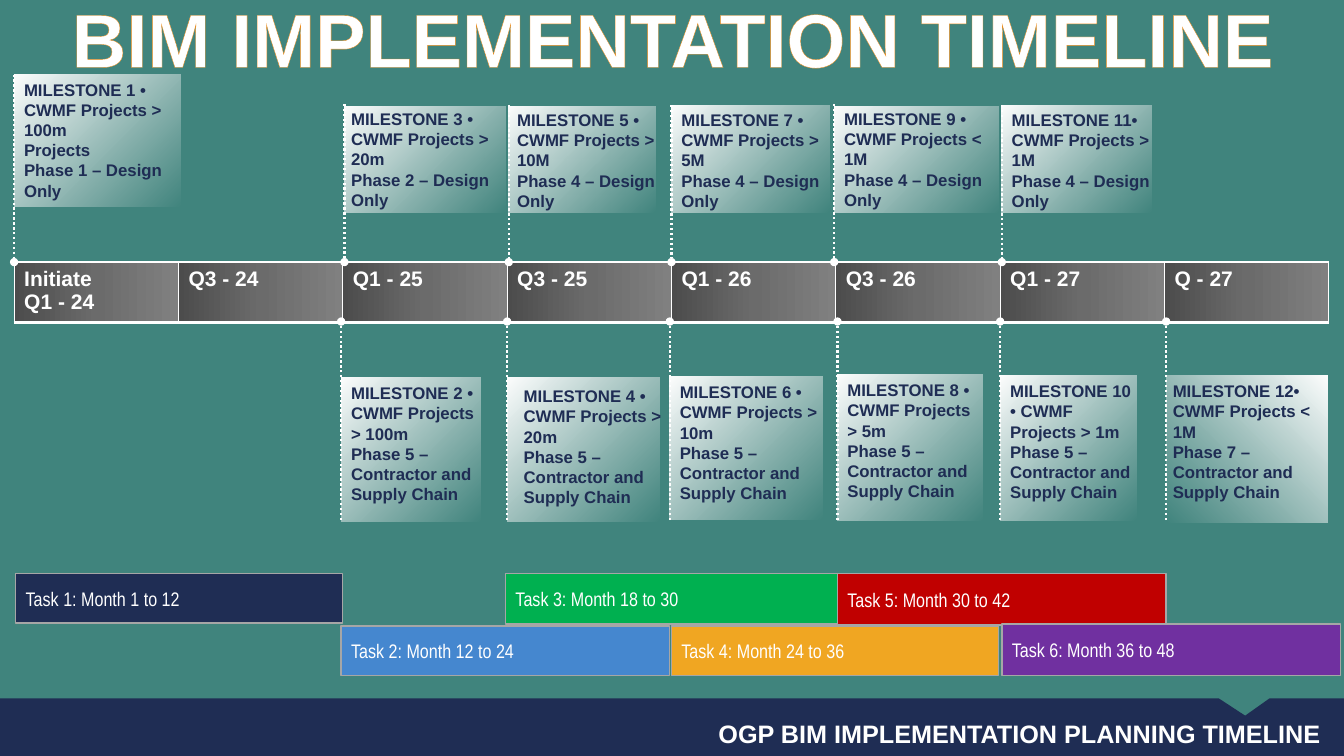
from lxml.etree import SubElement, Element
from pptx import Presentation
from pptx.dml.color import RGBColor as RGB
from pptx.enum.dml import MSO_LINE
from pptx.enum.shapes import MSO_CONNECTOR, MSO_SHAPE as SHAPE
from pptx.enum.text import MSO_ANCHOR as ANCHOR, MSO_AUTO_SIZE as AUTO, PP_ALIGN as ALIGN
from pptx.oxml.ns import qn
from pptx.util import Inches, Pt

TEAL = RGB(0x40, 0x84, 0x7D)
NAVY = RGB(0x1F, 0x2D, 0x54)
WHITE = RGB(0xFF, 0xFF, 0xFF)
PALE = RGB(0xF2, 0xF2, 0xF2)
GREY = RGB(0xA6, 0xA6, 0xA6)
BLACK = RGB(0, 0, 0)
BLUE = RGB(0x45, 0x87, 0xCF)
GREEN = RGB(0, 0xB0, 0x50)
AMBER = RGB(0xF0, 0xA6, 0x22)
ORANGE = RGB(0xEC, 0x8C, 0x1D)
RED = RGB(0xC0, 0, 0)
PURPLE = RGB(0x70, 0x30, 0xA0)
STEEL = [(0, RGB(0x4C, 0x4C, 0x4C), 100), (50, RGB(0x6B, 0x6B, 0x6B), 100),
         (100, RGB(0x80, 0x80, 0x80), 100)]
FADE = [(0, PALE, 0), (100, WHITE, 100)]

QUARTERS = ["Initiate\nQ1 - 24", "Q3 - 24", "Q1 - 25", "Q3 - 25",
            "Q1 - 26", "Q3 - 26", "Q1 - 27", "Q - 27"]
TASKS = [("Task 1: Month 1 to 12", NAVY, 0.01, 11.38, 1.99, 0.98),
         ("Task 2: Month 12 to 24", BLUE, 1.99, 12.42, 2, 0.98),
         ("Task 3: Month 18 to 30", GREEN, 2.99, 11.38, 2.02, 1),
         ("Task 4: Month 24 to 36", AMBER, 4, 12.42, 1.99, 0.98),
         ("Task 5: Month 30 to 42", RED, 5.01, 11.38, 2, 1.02),
         ("Task 6: Month 36 to 48", PURPLE, 6.01, 12.38, 2.06, 1.02)]
DESIGN = "Phase 4 – Design Only"
SUPPLY = "Phase 5 – Contractor and Supply Chain"
UPPER = [
    ("MILESTONE 1 • CWMF Projects > 100m\nProjects\nPhase 1 – Design Only",
     (0, 1.48, 1.01, 2.62), (0, 1.48, 1.11)),
    ("MILESTONE 3 • CWMF Projects > 20m\nPhase 2 – Design Only",
     (2.01, 2.12, 0.98, 2.1), (1.99, 2.06, 0.98)),
    ("MILESTONE 5 • CWMF Projects > 10M\n" + DESIGN,
     (3.01, 2.12, 0.89, 2.1), (3, 2.08, 0.98)),
    ("MILESTONE 7 • CWMF Projects > 5M\n" + DESIGN,
     (4, 2.1, 0.96, 2.12), (4, 2.08, 0.99)),
    ("MILESTONE 9 • CWMF Projects < 1M\n" + DESIGN,
     (4.99, 2.12, 1, 2.1), (4.99, 2.06, 1.05)),
    ("MILESTONE 11• CWMF Projects > 1M\n" + DESIGN,
     (6.01, 2.1, 0.91, 2.12), (6.01, 2.08, 0.97))]
LOWER = [
    ("MILESTONE 2 • CWMF Projects > 100m\n" + SUPPLY,
     (1.99, 7.5, 0.85, 2.84), (1.99, 7.5, 0.9)),
    ("MILESTONE 4 • CWMF Projects > 20m\n" + SUPPLY,
     (3, 7.5, 0.93, 2.84), (3.04, 7.56, 0.99)),
    ("MILESTONE 6 • CWMF Projects > 10m\n" + SUPPLY,
     (3.99, 7.48, 0.93, 2.82), (3.99, 7.48, 0.99)),
    ("MILESTONE 8 • CWMF Projects > 5m\n" + SUPPLY,
     (5.01, 7.44, 0.88, 2.88), (5.01, 7.44, 0.94)),
    ("MILESTONE 10 • CWMF Projects > 1m\n" + SUPPLY,
     (6, 7.46, 0.83, 2.86), (6, 7.46, 0.89)),
    ("MILESTONE 12• CWMF Projects < 1M\nPhase 7 – Contractor and Supply Chain",
     (7.01, 7.46, 0.98, 2.9), (6.99, 7.46, 1.01))]


def node(parent, tag, **attrs):
    return SubElement(parent, qn(tag), {k: str(v) for k, v in attrs.items()})


def tint(parent, color, alpha=100):
    clr = node(parent, "a:srgbClr", val=color)
    if alpha < 100:
        node(clr, "a:alpha", val=alpha * 1000)


def apply(obj, values):
    for name, value in values.items():
        setattr(obj, name, value)


class Timeline:
    """Draws timeline parts on a grid of 1.63 by 0.5 inch cells."""

    LEFT, COL, ROW = 0.14, 1.63, 0.5
    TITLE = dict(size=Pt(54), bold=True, name="Arial")
    FOOTER = dict(size=Pt(18), bold=True, name="Arial")
    QUARTER = dict(size=Pt(15), bold=True, name="Arial")
    NOTE = dict(size=Pt(12), bold=True, name="Arial")
    TASK = dict(size=Pt(14), bold=False, name="Arial Narrow")

    def __init__(self, prs):
        self.prs = prs
        self.s = prs.slides.add_slide(prs.slide_layouts[6])
        self.s.background.fill.solid()
        self.s.background.fill.fore_color.rgb = TEAL

    def at(self, col, row):
        return Inches(self.LEFT + col * self.COL), Inches(row * self.ROW)

    def box(self, col, row, cols, rows):
        return *self.at(col, row), Inches(cols * self.COL), Inches(rows * self.ROW)

    def label(self, tf, text, style, color, align=ALIGN.LEFT):
        tf.text = text
        for p in tf.paragraphs:
            p.alignment = align
            for r in p.runs:
                apply(r.font, style)
                r.font.color.rgb = color

    def gradient(self, fill, element, stops, angle):
        fill.gradient()
        fill.gradient_angle = angle
        stop_list = element.find(".//" + qn("a:gsLst"))
        for old in list(stop_list):
            stop_list.remove(old)
        for pos, color, alpha in stops:
            tint(node(stop_list, "a:gs", pos=pos * 1000), color, alpha)

    def text(self, place, text, style, color, align=ALIGN.LEFT, wrap=True):
        tf = self.s.shapes.add_textbox(*self.box(*place)).text_frame
        apply(tf, dict(word_wrap=wrap, auto_size=AUTO.SHAPE_TO_FIT_TEXT))
        self.label(tf, text, style, color, align)
        return [r._r.get_or_add_rPr() for p in tf.paragraphs for r in p.runs]

    def title(self, place, text):
        for props in self.text(place, text, self.TITLE, WHITE, ALIGN.CENTER, False):
            ln = Element(qn("a:ln"), w=str(Pt(0.52)))
            tint(node(ln, "a:solidFill"), ORANGE)
            props.insert(0, ln)

    def band(self, shares):
        w, h = self.prs.slide_width, self.prs.slide_height
        points = [(round(x * w / 100), round(y * h / 100)) for x, y in shares]
        builder = self.s.shapes.build_freeform(*points[0])
        builder.add_line_segments(points[1:], close=True)
        sp = builder.convert_to_shape()
        sp.shadow.inherit = False
        sp.fill.solid()
        sp.fill.fore_color.rgb = NAVY
        sp.line.fill.background()

    def task(self, text, color, *place):
        sp = self.s.shapes.add_shape(SHAPE.RECTANGLE, *self.box(*place))
        sp.shadow.inherit = False
        sp.fill.solid()
        sp.fill.fore_color.rgb = color
        sp.line.color.rgb = GREY
        sp.line.width = Pt(1)
        sp.text_frame.vertical_anchor = ANCHOR.MIDDLE
        self.label(sp.text_frame, text, self.TASK, WHITE)

    def quarters(self, place, names):
        table = self.s.shapes.add_table(1, len(names), *self.box(*place)).table
        apply(table, dict(first_row=False, horz_banding=False))
        for cell, name in zip(table.rows[0].cells, names):
            self.label(cell.text_frame, name, self.QUARTER, WHITE)
            props = cell._tc.get_or_add_tcPr()
            for side, width in zip("LRTB", (1, 1, 1, 3)):
                tint(node(node(props, "a:ln" + side, w=Pt(width)), "a:solidFill"), WHITE)
            self.gradient(cell.fill, props, STEEL, 0)

    def milestone(self, text, card, note, start, end, angle=135):
        sp = self.s.shapes.add_shape(SHAPE.ROUNDED_RECTANGLE, *self.box(*card))
        sp.adjustments[0] = 0
        sp.shadow.inherit = False
        sp.line.fill.background()
        self.gradient(sp.fill, sp._element.spPr, FADE, angle)
        for props in self.text((*note, card[3]), text, self.NOTE, NAVY):
            effects = Element(qn("a:effectLst"))
            tint(node(effects, "a:outerShdw", blurRad=38100, dist=38100, dir=2700000), BLACK, 43)
            props.find(qn("a:solidFill")).addnext(effects)
        self.leader(card[0], start, end)

    def leader(self, col, start, end):
        line = self.s.shapes.add_connector(
            MSO_CONNECTOR.STRAIGHT, *self.at(col, start), *self.at(col, end))
        line.line.color.rgb = WHITE
        apply(line.line, dict(width=Pt(1.75), dash_style=MSO_LINE.ROUND_DOT))
        node(line.get_or_add_ln(), "a:tailEnd", type="oval")
        node(line._element.spPr, "a:effectLst")


def main():
    prs = Presentation()
    apply(prs, dict(slide_width=Inches(13.33), slide_height=Inches(7.5)))
    t = Timeline(prs)
    t.band([(0, 92.4), (90.7, 92.4), (92.65, 94.67), (94.45, 92.4),
            (100, 92.4), (100, 100), (0, 100)])
    for task in TASKS:
        t.task(*task)
    t.text((3.85, 14.16, 4.16, 0.8), "OGP BIM IMPLEMENTATION PLANNING TIMELINE",
           t.FOOTER, WHITE, ALIGN.RIGHT)
    t.quarters((0, 5.2, 8, 1.2), QUARTERS)
    t.title((0.25, -0.26, 7.52, 2.02), "BIM IMPLEMENTATION TIMELINE")
    for text, card, note in UPPER:
        t.milestone(text, card, note, note[1], 5.2)
    for text, card, note in LOWER:
        t.milestone(text, card, note, 10.32, 6.38, 45 if card[0] > 7 else 135)
    prs.save("out.pptx")


if __name__ == "__main__":
    main()
